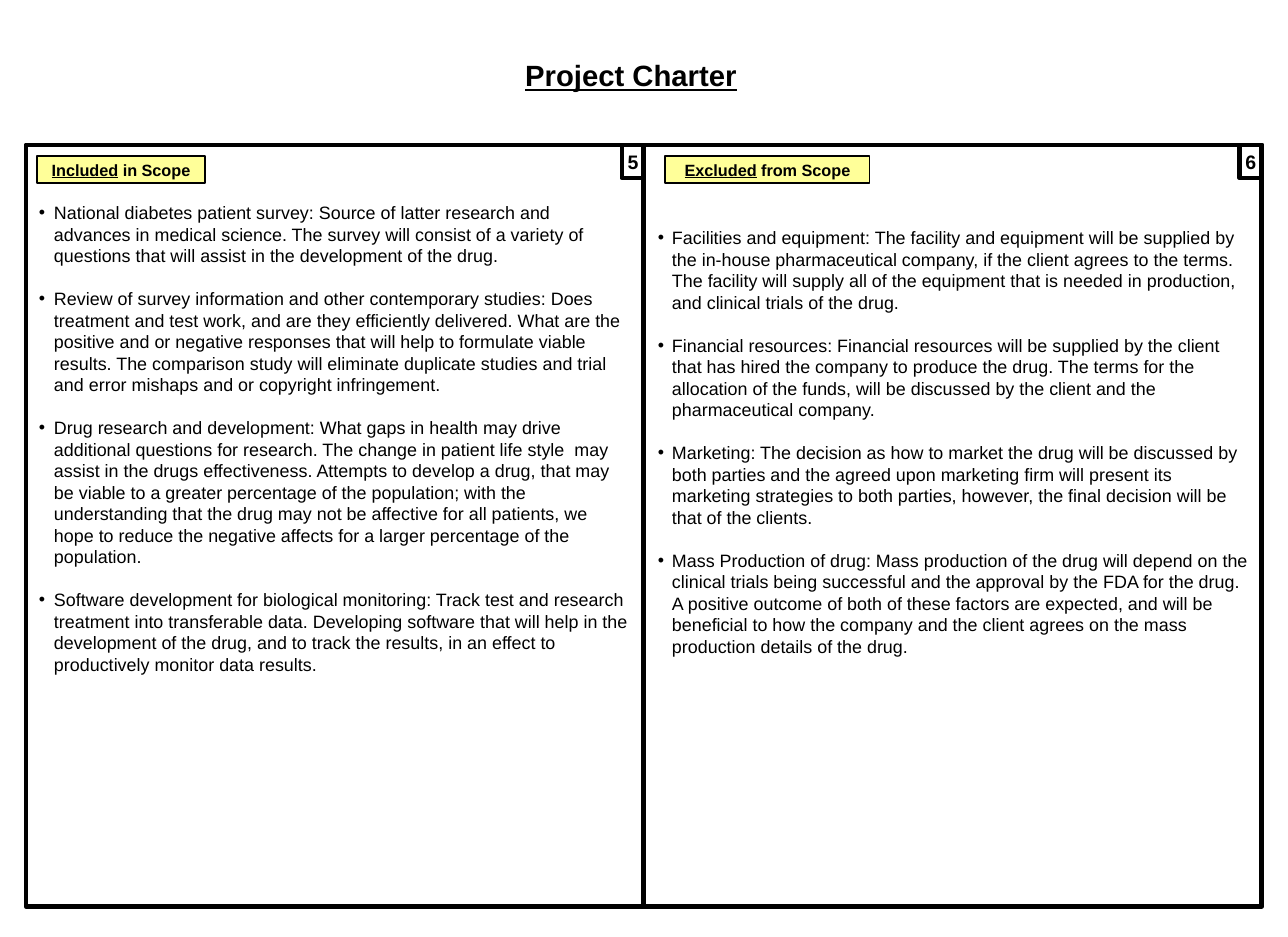
from dataclasses import dataclass

from lxml.etree import SubElement
from pptx import Presentation
from pptx.dml.color import RGBColor as Rgb
from pptx.enum.shapes import MSO_SHAPE as Shape
from pptx.enum.text import MSO_ANCHOR as Anchor, MSO_AUTO_SIZE as AutoSize, PP_ALIGN as Align
from pptx.oxml.ns import qn
from pptx.util import Emu, Inches, Pt

PX_PER_INCH = 117.1


def px(length):
    return Emu(round(length * 914400 / PX_PER_INCH))


@dataclass(frozen=True)
class Theme:
    font: str = "Arial"
    ink: Rgb = Rgb(0x00, 0x00, 0x00)
    label_fill: Rgb = Rgb(0xFF, 0xFF, 0x99)
    title_size: float = 18
    number_size: float = 12
    list_size: float = 11
    label_size: float = 10
    list_leading: float = 13.2
    heavy_line: float = 3
    thin_line: float = 0.75


class CharterSlide:
    def __init__(self, slide, theme):
        self.slide = slide
        self.theme = theme

    def style(self, paragraph, size, bold=True, align=Align.CENTER):
        paragraph.alignment = align
        font = paragraph.font
        font.name, font.size, font.bold = self.theme.font, Pt(size), bold
        font.color.rgb = self.theme.ink

    def place(self, shape, left, top, width, height):
        shape.left, shape.top, shape.width, shape.height = map(px, (left, top, width, height))

    def fit(self, frame, inset, anchor):
        frame.word_wrap = True
        frame.auto_size = AutoSize.NONE
        frame.vertical_anchor = anchor
        frame.margin_left = frame.margin_right = px(inset)
        frame.margin_top = frame.margin_bottom = px(inset)

    def title(self, text, *box):
        heading = self.slide.shapes.title
        self.place(heading, *box)
        self.fit(heading.text_frame, 5, Anchor.MIDDLE)
        heading.text_frame.text = text
        line = heading.text_frame.paragraphs[0]
        self.style(line, self.theme.title_size)
        line.font.underline = True

    def box(self, left, top, width, height, line_width, fill=None):
        rect = self.slide.shapes.add_shape(
            Shape.RECTANGLE, *map(px, (left, top, width, height)))
        rect.shadow.inherit = False
        rect.line.color.rgb = self.theme.ink
        rect.line.width = Pt(line_width)
        if fill is None:
            rect.fill.background()
        else:
            rect.fill.solid()
            rect.fill.fore_color.rgb = fill
        return rect

    def label(self, underlined, rest, *box):
        tag = self.box(*box, self.theme.thin_line, self.theme.label_fill)
        self.fit(tag.text_frame, 2, Anchor.MIDDLE)
        line = tag.text_frame.paragraphs[0]
        self.style(line, self.theme.label_size)
        for words, is_underlined in ((underlined, True), (rest, False)):
            run = line.add_run()
            run.text = words
            run.font.underline = is_underlined

    def number(self, text, *box):
        corner = self.box(*box, self.theme.heavy_line)
        self.fit(corner.text_frame, 2, Anchor.MIDDLE)
        corner.text_frame.text = text
        self.style(corner.text_frame.paragraphs[0], self.theme.number_size)

    def bullets(self, index, items, indent, *box):
        body = self.slide.placeholders[index]
        self.place(body, *box)
        frame = body.text_frame
        self.fit(frame, 6, Anchor.TOP)
        frame.text = "\n".join(items)
        for position, item in enumerate(frame.paragraphs):
            properties = item._p.get_or_add_pPr()
            properties.set("marL", str(px(indent)))
            properties.set("indent", str(-px(indent)))
            SubElement(properties, qn("a:buFont"), typeface=self.theme.font)
            SubElement(properties, qn("a:buChar"), char="•")
            item.line_spacing = Pt(self.theme.list_leading)
            item.space_before = Pt(self.theme.list_leading if position else 0)
            item.space_after = Pt(0)
            self.style(item, self.theme.list_size, bold=False, align=Align.LEFT)


INCLUDED = [
    "National diabetes patient survey: Source of latter research and advances in medical science. "
    "The survey will consist of a variety of questions that will assist in the development of the drug.",
    "Review of survey information and other contemporary studies: Does treatment and test work, and "
    "are they efficiently delivered. What are the positive and or negative responses that will help to "
    "formulate viable results. The comparison study will eliminate duplicate studies and trial and "
    "error mishaps and or copyright infringement.",
    "Drug research and development: What gaps in health may drive additional questions for research. "
    "The change in patient life style  may assist in the drugs effectiveness. Attempts to develop a "
    "drug, that may be viable to a greater percentage of the population; with the understanding that "
    "the drug may not be affective for all patients, we hope to reduce the negative affects for a "
    "larger percentage of the population.",
    "Software development for biological monitoring: Track test and research treatment into "
    "transferable data. Developing software that will help in the development of the drug, and to "
    "track the results, in an effect to productively monitor data results.",
]
EXCLUDED = [
    "Facilities and equipment: The facility and equipment will be supplied by the in-house "
    "pharmaceutical company, if the client agrees to the terms. The facility will supply all of the "
    "equipment that is needed in production, and clinical trials of the drug.",
    "Financial resources: Financial resources will be supplied by the client that has hired the "
    "company to produce the drug. The terms for the allocation of the funds, will be discussed by the "
    "client and the pharmaceutical company.",
    "Marketing: The decision as how to market the drug will be discussed by both parties and the "
    "agreed upon marketing firm will present its marketing strategies to both parties, however, the "
    "final decision will be that of the clients.",
    "Mass Production of drug: Mass production of the drug will depend on the clinical trials being "
    "successful and the approval by the FDA for the drug. A positive outcome of both of these factors "
    "are expected, and will be beneficial to how the company and the client agrees on the mass "
    "production details of the drug.",
]

PANEL_LEFT, PANEL_TOP, PANEL_WIDTH, PANEL_HEIGHT = 26, 145, 618, 761
NUMBER_WIDTH, NUMBER_HEIGHT = 22, 33


def main():
    deck = Presentation()
    deck.slide_width, deck.slide_height = Inches(11), Inches(8)
    theme = Theme()
    charter = CharterSlide(deck.slides.add_slide(deck.slide_layouts[3]), theme)

    # Heading
    charter.title("Project Charter", 331, 50, 600, 50)

    # Scope panels: number, label words, label left and width, items, indent, list left and top
    panels = [
        ("5", "Included", " in Scope", 37, 168, INCLUDED, 15, 33, 196),
        ("6", "Excluded", " from Scope", 665, 205, EXCLUDED, 14, 652, 221),
    ]
    for column, panel in enumerate(panels):
        number, key, rest, label_left, label_width, items, indent, list_left, list_top = panel
        left = PANEL_LEFT + column * PANEL_WIDTH
        charter.box(left, PANEL_TOP, PANEL_WIDTH, PANEL_HEIGHT, theme.heavy_line)
        charter.number(number, left + PANEL_WIDTH - NUMBER_WIDTH, PANEL_TOP,
                       NUMBER_WIDTH, NUMBER_HEIGHT)
        charter.label(key, rest, label_left, 156, label_width, 27)
        charter.bullets(column + 1, items, indent, list_left, list_top, 603, 490)

    deck.save("out.pptx")


if __name__ == "__main__":
    main()
